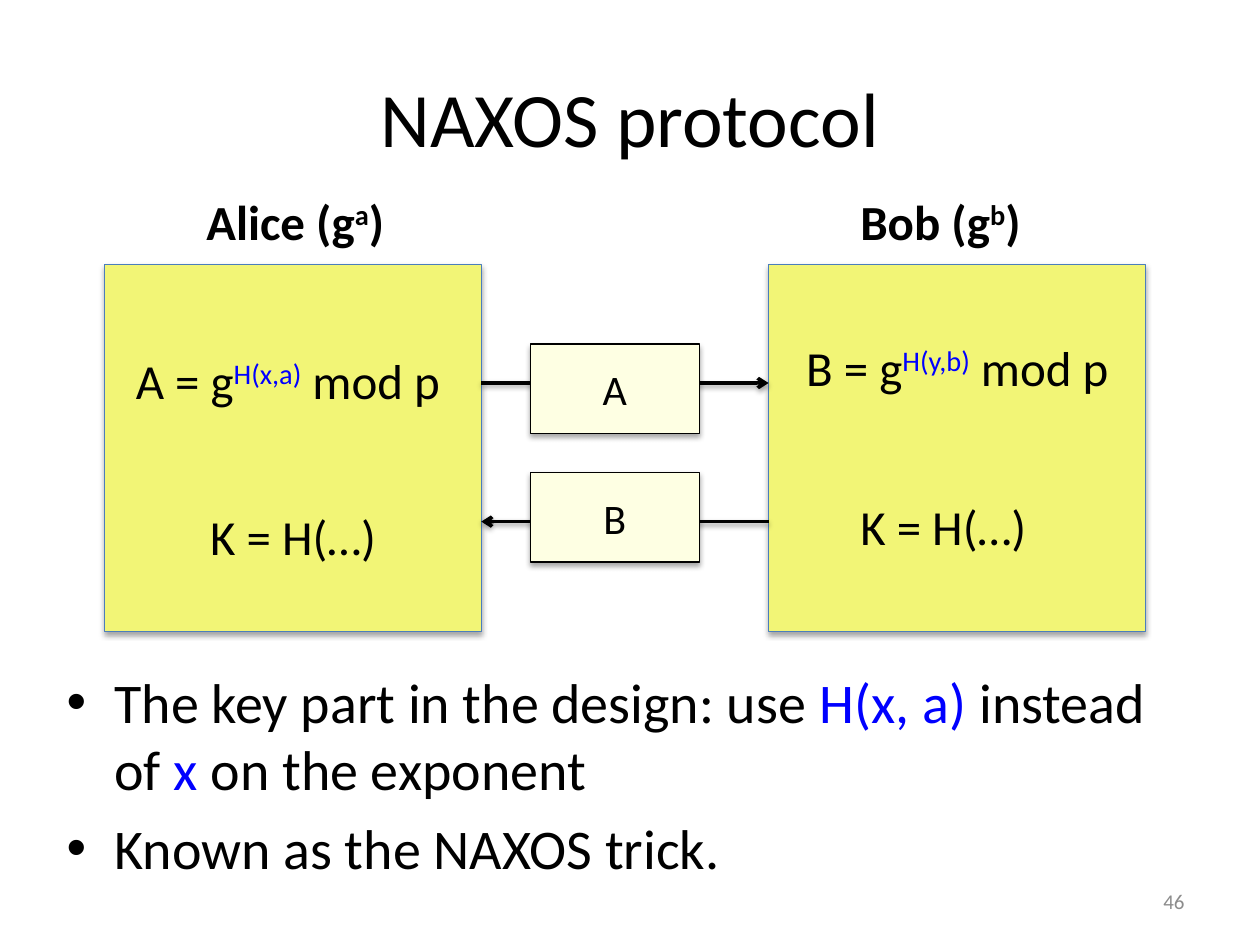
from dataclasses import dataclass

from lxml.etree import SubElement
from pptx import Presentation
from pptx.dml.color import RGBColor
from pptx.enum.shapes import MSO_CONNECTOR, MSO_SHAPE
from pptx.enum.text import MSO_ANCHOR, MSO_AUTO_SIZE, PP_ALIGN
from pptx.oxml.ns import qn
from pptx.util import Inches, Pt


@dataclass(frozen=True)
class Theme:
    font: str = "Calibri"
    black: str = "000000"
    accent: str = "0000FF"
    muted: str = "8C8C8C"
    party_fill: str = "F2F576"
    party_line: str = "4B7EBC"
    message_fill: str = "FEFFE3"
    title: int = 44
    body: int = 32
    label: int = 28
    message: int = 24
    number: int = 12


THEME = Theme()
SUPER = {"base": 30}
BLUE = {"color": THEME.accent}


def inches(*values):
    return [Inches(v) for v in values]


def write_text(tf, *paragraphs, size=THEME.label, color=THEME.black, bold=False,
               align=PP_ALIGN.LEFT, anchor=MSO_ANCHOR.TOP, wrap=True, bullet=False):
    tf.word_wrap = wrap
    tf.vertical_anchor = anchor
    tf.auto_size = MSO_AUTO_SIZE.NONE if wrap else MSO_AUTO_SIZE.SHAPE_TO_FIT_TEXT
    for i, runs in enumerate(paragraphs):
        p = tf.paragraphs[0] if i == 0 else tf.add_paragraph()
        p.alignment = align
        if bullet:
            add_bullet(p, size)
        for run in runs:
            text, fmt = run if isinstance(run, tuple) else (run, {})
            r = p.add_run()
            r.text = text
            r.font.name = THEME.font
            r.font.size = Pt(size)
            r.font.bold = bold
            r.font.color.rgb = RGBColor.from_string(fmt.get("color", color))
            if "base" in fmt:
                r.font._element.set("baseline", str(fmt["base"] * 1000))


def add_bullet(p, size):
    p.space_before = Pt(size * 0.2)
    pPr = p._p.get_or_add_pPr()
    pPr.set("marL", str(Inches(0.38)))
    pPr.set("indent", str(Inches(-0.38)))
    SubElement(pPr, qn("a:buFont"), typeface="Arial")
    SubElement(pPr, qn("a:buChar"), char="•")


def add_text(s, box, *paragraphs, **fmt):
    sp = s.shapes.add_textbox(*inches(*box))
    write_text(sp.text_frame, *paragraphs, **fmt)


def add_shadow(effects, dist, alpha):
    shadow = SubElement(effects, qn("a:outerShdw"), blurRad=str(Pt(3.1)),
                        dist=str(Pt(dist)), dir="5400000", rotWithShape="0")
    color = SubElement(shadow, qn("a:srgbClr"), val=THEME.black)
    SubElement(color, qn("a:alpha"), val=str(alpha * 1000))


def add_box(s, box, fill, line):
    sp = s.shapes.add_shape(MSO_SHAPE.RECTANGLE, *inches(*box))
    sp.fill.solid()
    sp.fill.fore_color.rgb = RGBColor.from_string(fill)
    sp.line.color.rgb = RGBColor.from_string(line)
    sp.line.width = Pt(0.75)
    sp.shadow.inherit = False
    add_shadow(sp._element.spPr.find(qn("a:effectLst")), 1.8, 35)
    return sp


def add_line(s, start, end, y, arrow):
    c = s.shapes.add_connector(MSO_CONNECTOR.STRAIGHT, *inches(start, y, end, y))
    c.line.color.rgb = RGBColor.from_string(THEME.black)
    c.line.width = Pt(2)
    if arrow:
        SubElement(c.line._get_or_add_ln(), qn("a:tailEnd"), type="arrow")
    add_shadow(SubElement(c._element.spPr, qn("a:effectLst")), 1.6, 38)


def add_title(s, box, text):
    sp = s.shapes.title
    sp.left, sp.top, sp.width, sp.height = inches(*box)
    write_text(sp.text_frame, [text], size=THEME.title,
               align=PP_ALIGN.CENTER, anchor=MSO_ANCHOR.MIDDLE)


def add_party(s, box, name, formula, key):
    left, top, _, _ = box
    add_box(s, box, THEME.party_fill, THEME.party_line)
    for (dx, dy, width), runs, bold in (name, formula, key):
        add_text(s, (left + dx, top + dy, width, 0.57), runs, bold=bold, wrap=False)


def add_message(s, box, text, sender_x, receiver_x):
    left, top, width, height = box
    y = top + 0.31 if sender_x < receiver_x else top + 0.39
    near, far = left + 0.2, left + width - 0.08
    if sender_x > receiver_x:
        near, far = far, near
    add_line(s, sender_x, near, y, arrow=False)
    add_line(s, far, receiver_x, y, arrow=True)
    sp = add_box(s, box, THEME.message_fill, THEME.black)
    write_text(sp.text_frame, [text], size=THEME.message,
               align=PP_ALIGN.CENTER, anchor=MSO_ANCHOR.MIDDLE)


def add_exchange(s, box):
    left, top, width, height = box
    party_w = 2.99
    bob_left = left + width - party_w
    add_party(s, (left, top, party_w, height),
              ((0.71, -0.63, 1.63), ["Alice (g", ("a", SUPER), ")"], True),
              ((0.15, 0.63, 2.73), ["A = g", ("H(x,a)", BLUE | SUPER), " mod p"], False),
              ((0.74, 1.87, 1.54), ["K = H(…)"], False))
    add_party(s, (bob_left, top, party_w, height),
              ((0.63, -0.63, 1.5), ["Bob (g", ("b", SUPER), ")"], True),
              ((0.2, 0.53, 2.71), ["B = g", ("H(y,b)", BLUE | SUPER), " mod p"], False),
              ((0.63, 1.79, 1.56), ["K = H(…)"], False))
    alice_right = left + party_w
    ends = (alice_right, bob_left)
    for i, (text, (sender, receiver)) in enumerate((("A", ends), ("B", ends[::-1]))):
        add_message(s, (alice_right + 0.39, top + 0.63 + 1.02 * i, 1.34, 0.71),
                    text, sender, receiver)


def add_notes_list(s, box):
    add_text(s, box,
             ["The key part in the design: use ", ("H(x, a) ", BLUE), "instead of ",
              ("x", BLUE), " on the exponent"],
             ["Known as the NAXOS trick."],
             size=THEME.body, bullet=True)


def add_number(s, box, text):
    add_text(s, box, [text], size=THEME.number, color=THEME.muted,
             align=PP_ALIGN.RIGHT, anchor=MSO_ANCHOR.MIDDLE)


def main():
    prs = Presentation()
    prs.slide_width, prs.slide_height = inches(10, 7.5)
    s = prs.slides.add_slide(prs.slide_layouts[5])
    add_title(s, (0.5, 0.3, 9, 1.25), "NAXOS protocol")
    add_exchange(s, (0.83, 2.1, 8.26, 2.91))
    add_notes_list(s, (0.43, 5.25, 9, 1.69))
    add_number(s, (7.17, 6.95, 2.33, 0.4), "46")
    prs.save("out.pptx")


if __name__ == "__main__":
    main()
